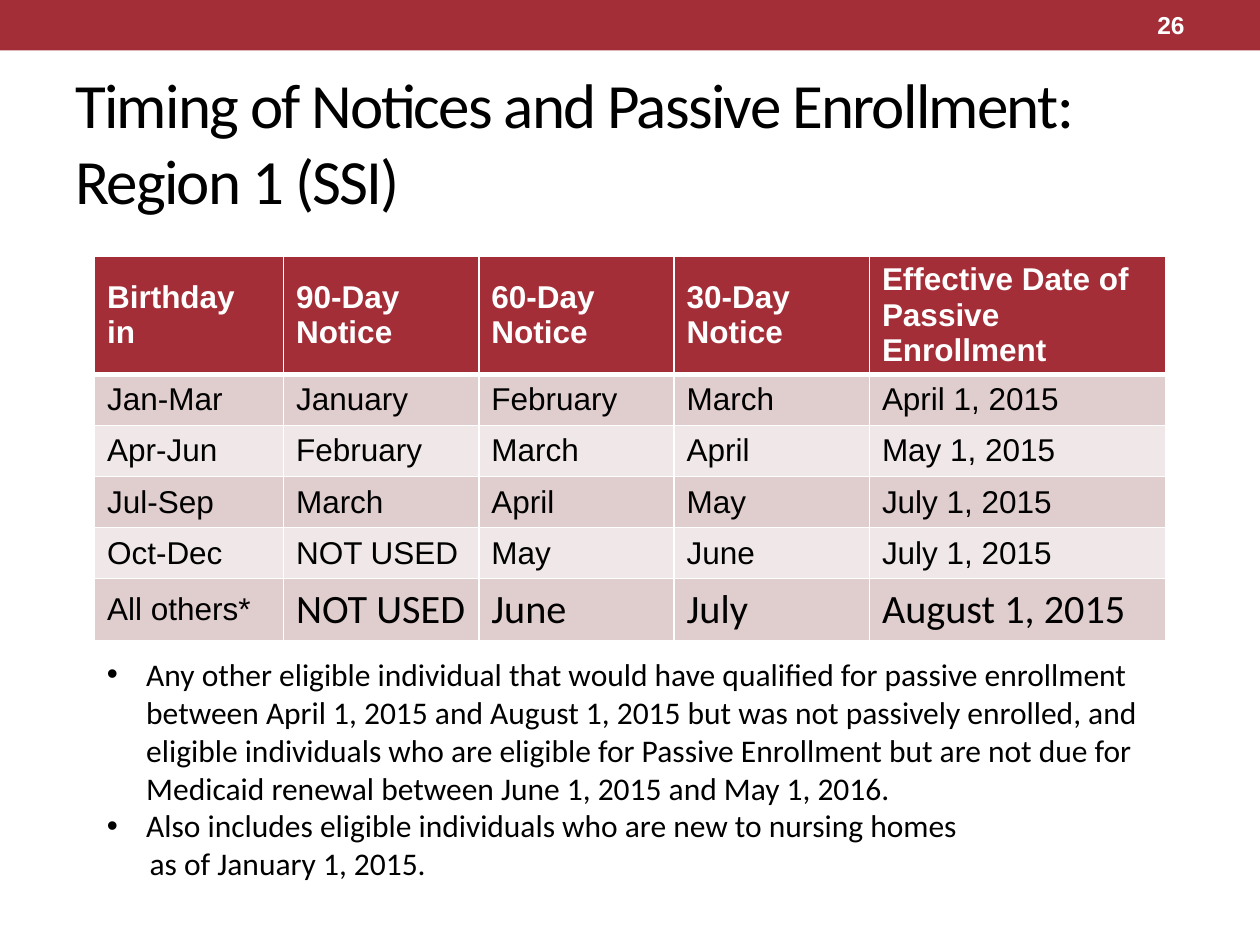
from lxml import etree
from pptx import Presentation
from pptx.dml.color import RGBColor
from pptx.enum import shapes, text
from pptx.oxml import ns
from pptx.util import Pt

COLORS = {
    "red": "A32E37",
    "dark_band": "E0CDCE",
    "light_band": "F0E8E8",
    "white": "FFFFFF",
    "black": "000000",
}

SCHEDULE = [
    ["Birthday in", "90-Day Notice", "60-Day Notice", "30-Day Notice",
     "Effective Date of Passive Enrollment"],
    ["Jan-Mar", "January", "February", "March", "April 1, 2015"],
    ["Apr-Jun", "February", "March", "April", "May 1, 2015"],
    ["Jul-Sep", "March", "April", "May", "July 1, 2015"],
    ["Oct-Dec", "NOT USED", "May", "June", "July 1, 2015"],
    ["All others*", "NOT USED", "June", "July", "August 1, 2015"],
]
COLUMN_WIDTHS = [108, 111.6, 111.6, 111.6, 169.2]
ROW_HEIGHTS = [67.2, 29.2, 29.2, 29.2, 29.2, 35.2]

BULLETS = [
    "Any other eligible individual that would have qualified for passive "
    "enrollment between April 1, 2015 and August 1, 2015 but was not passively "
    "enrolled, and eligible individuals who are eligible for Passive Enrollment "
    "but are not due for Medicaid renewal between June 1, 2015 and May 1, 2016.",
    "Also includes eligible individuals who are new to nursing homes",
]
CONTINUATION = "as of January 1, 2015."


def rgb(name):
    return RGBColor.from_string(COLORS[name])


def style(paragraph, font_name, size, color="black", bold=False):
    for run in paragraph.runs:
        font = run.font
        font.name, font.size, font.bold = font_name, Pt(size), bold
        font.color.rgb = rgb(color)


def add_text(slide, box, content, anchor=text.MSO_ANCHOR.MIDDLE):
    frame = slide.shapes.add_textbox(*map(Pt, box)).text_frame
    frame.word_wrap = True
    frame.vertical_anchor = anchor
    frame.text = content
    return frame


def add_top_bar(slide):
    bar = slide.shapes.add_shape(
        shapes.MSO_SHAPE.RECTANGLE, Pt(0), Pt(0), Pt(720), Pt(28.8))
    bar.shadow.inherit = False
    bar.fill.solid()
    bar.fill.fore_color.rgb = rgb("red")
    bar.line.fill.background()


def add_title(slide):
    frame = add_text(slide, (36, 41.8, 648, 77.8),
                     "Timing of Notices and Passive Enrollment: Region 1 (SSI)")
    title = frame.paragraphs[0]
    style(title, "Calibri", 36)
    title.runs[0].font._element.set("spc", "-100")


def set_borders(cell, bottom_width):
    """Draw white borders; the line elements must precede the cell fill."""
    properties = cell._tc.get_or_add_tcPr()
    widths = {"lnL": 1, "lnR": 1, "lnT": 1, "lnB": bottom_width}
    for position, (side, width) in enumerate(widths.items()):
        border = etree.Element(ns.qn(f"a:{side}"), w=str(Pt(width)))
        fill = etree.SubElement(border, ns.qn("a:solidFill"))
        etree.SubElement(fill, ns.qn("a:srgbClr"), val=COLORS["white"])
        properties.insert(position, border)


def add_schedule(slide):
    table = slide.shapes.add_table(
        len(SCHEDULE), len(COLUMN_WIDTHS), Pt(54), Pt(146.2),
        Pt(sum(COLUMN_WIDTHS)), Pt(sum(ROW_HEIGHTS))).table
    for column, width in zip(table.columns, COLUMN_WIDTHS):
        column.width = Pt(width)
    for row, height in zip(table.rows, ROW_HEIGHTS):
        row.height = Pt(height)

    last_row = len(SCHEDULE) - 1
    for r, entries in enumerate(SCHEDULE):
        header = r == 0
        band = "red" if header else "dark_band" if r % 2 else "light_band"
        for c, entry in enumerate(entries):
            cell = table.cell(r, c)
            cell.text_frame.text = entry
            cell.vertical_anchor = text.MSO_ANCHOR.MIDDLE
            cell.fill.solid()
            cell.fill.fore_color.rgb = rgb(band)
            set_borders(cell, 3 if header else 1)
            large = r == last_row and c > 0
            style(cell.text_frame.paragraphs[0],
                  "Calibri" if large else "Arial", 23 if large else 18,
                  "white" if header else "black", header)
            if r == 1:
                cell._tc.tcPr.find(ns.qn("a:lnT")).set("w", str(Pt(3)))


def indent(paragraph, left, bullet=None):
    properties = paragraph._p.get_or_add_pPr()
    properties.set("marL", str(Pt(left)))
    properties.set("indent", str(Pt(-left) if bullet else 0))
    if bullet:
        etree.SubElement(properties, ns.qn("a:buFont"), typeface="Arial")
        etree.SubElement(properties, ns.qn("a:buChar"), char=bullet)


def add_footnotes(slide):
    frame = add_text(slide, (54, 370.8, 612, 138.2),
                     "\n".join(BULLETS + [CONTINUATION]), text.MSO_ANCHOR.TOP)
    *bullets, continuation = frame.paragraphs
    for bullet in bullets:
        indent(bullet, 22.5, "•")
    indent(continuation, 24.4)
    for paragraph in frame.paragraphs:
        style(paragraph, "Calibri", 18)


def add_page_number(slide):
    number = add_text(slide, (599.8, 1.4, 84.2, 25.9), "26").paragraphs[0]
    number.alignment = text.PP_ALIGN.RIGHT
    style(number, "Arial", 14, "white", True)


def main():
    deck = Presentation()
    deck.slide_width, deck.slide_height = Pt(720), Pt(540)
    slide = deck.slides.add_slide(deck.slide_layouts[6])
    add_top_bar(slide)
    add_schedule(slide)
    add_title(slide)
    add_footnotes(slide)
    add_page_number(slide)
    deck.save("out.pptx")


if __name__ == "__main__":
    main()
